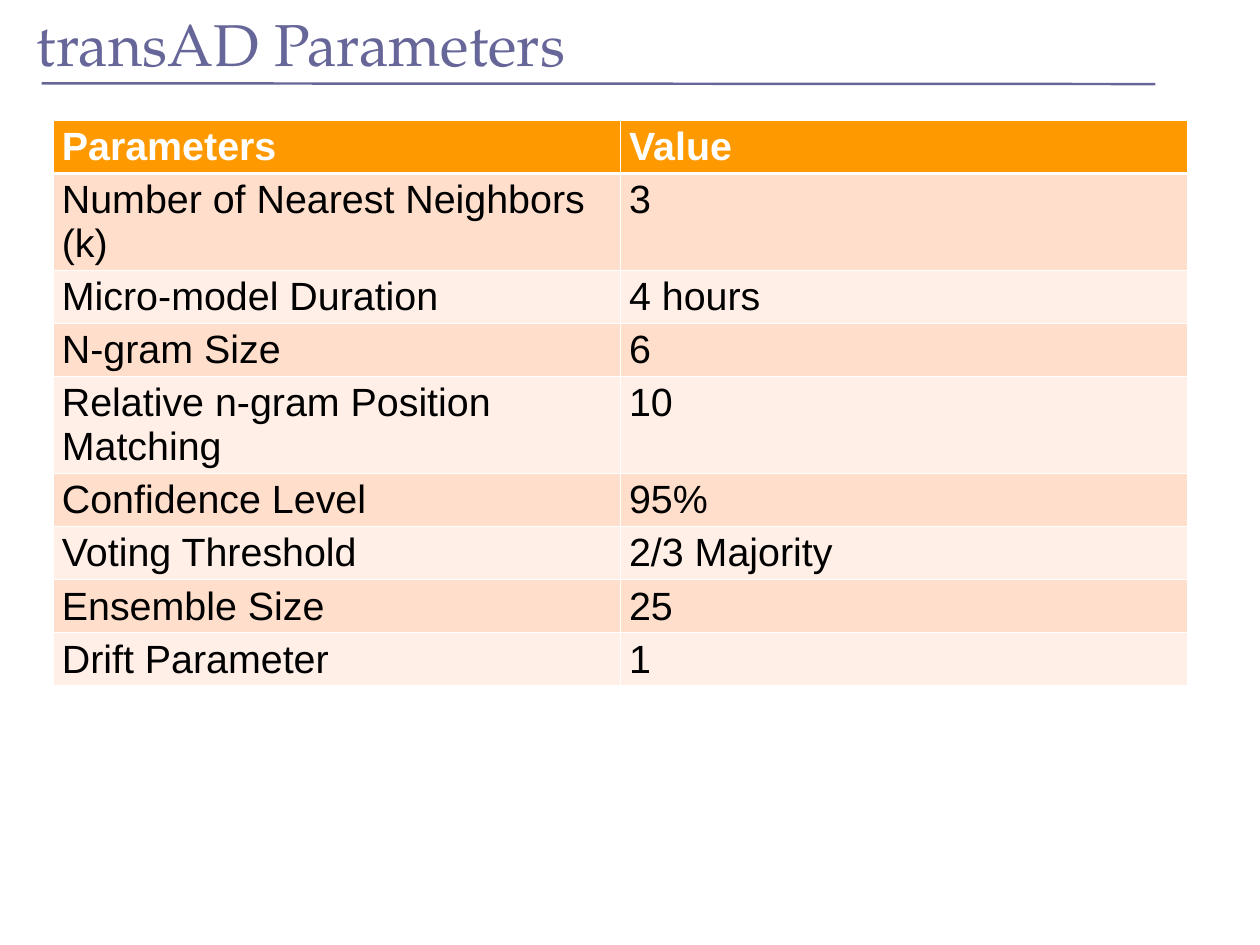
from dataclasses import dataclass

from lxml.etree import SubElement
from pptx import Presentation
from pptx.dml.color import RGBColor
from pptx.enum.shapes import MSO_CONNECTOR as Connector
from pptx.enum.text import MSO_ANCHOR as Anchor, MSO_AUTO_SIZE as AutoSize, PP_ALIGN as Align
from pptx.oxml import parse_xml
from pptx.oxml.ns import nsdecls, qn
from pptx.util import Cm, Pt

COLOURS = {
    "accent": "666699",
    "header": "FF9900",
    "odd row": "FFDECC",
    "even row": "FFEFE7",
    "white": "FFFFFF",
    "text": "000000",
}
LINE_HEIGHT, CELL_PADDING = 1.25, 0.25


@dataclass
class Parameter:
    name: str
    value: str
    lines: int = 1


PARAMETERS = [
    Parameter("Parameters", "Value"),
    Parameter("Number of Nearest Neighbors (k)", "3", lines=2),
    Parameter("Micro-model Duration", "4 hours"),
    Parameter("N-gram Size", "6"),
    Parameter("Relative n-gram Position Matching", "10", lines=2),
    Parameter("Confidence Level", "95%"),
    Parameter("Voting Threshold", "2/3 Majority"),
    Parameter("Ensemble Size", "25"),
    Parameter("Drift Parameter", "1"),
]


def colour(name: str) -> RGBColor:
    return RGBColor.from_string(COLOURS[name])


def add_borders(cell, bottom_width: float) -> None:
    """Put white borders ahead of the fill in the cell properties."""
    properties = cell._tc.get_or_add_tcPr()
    widths = {"lnL": 1, "lnR": 1, "lnT": 1, "lnB": bottom_width}
    for position, (side, width) in enumerate(widths.items()):
        border = parse_xml(
            f'<a:{side} {nsdecls("a")} w="{Pt(width)}"><a:solidFill>'
            f'<a:srgbClr val="{COLOURS["white"]}"/></a:solidFill></a:{side}>'
        )
        properties.insert(position, border)


def format_cell(cell, text: str, row_index: int) -> None:
    is_header = row_index == 0
    cell.text = text
    cell.fill.solid()
    band = "odd row" if row_index % 2 else "even row"
    cell.fill.fore_color.rgb = colour("header" if is_header else band)
    add_borders(cell, bottom_width=3 if is_header else 1)
    font = cell.text_frame.paragraphs[0].font
    font.name, font.size, font.bold = "Arial", Pt(32), is_header
    font.color.rgb = colour("white" if is_header else "text")


def add_title(slide, text: str) -> None:
    title = slide.shapes.title
    title.left, title.top, title.width, title.height = Cm(0.91), Cm(0), Cm(32.54), Cm(2.39)
    frame = title.text_frame
    frame.text = text
    frame.auto_size = AutoSize.NONE
    frame.vertical_anchor = Anchor.BOTTOM
    frame.margin_left = frame.margin_top = frame.margin_bottom = Cm(0.15)
    frame.margin_right = Cm(0.3)
    paragraph = frame.paragraphs[0]
    paragraph.alignment = Align.LEFT
    paragraph.font.name, paragraph.font.size = "TeX Gyre Pagella", Pt(48)
    paragraph.font.color.rgb = colour("accent")


def add_title_rule(slide) -> None:
    rule = slide.shapes.add_connector(
        Connector.STRAIGHT, Cm(1.19), Cm(2.39), Cm(33.12), Cm(2.41)
    )
    rule.line.color.rgb = colour("accent")
    rule.line.width = Pt(2)
    SubElement(rule._element.spPr, qn("a:effectLst"))


def add_parameter_table(slide, parameters: list[Parameter]) -> None:
    heights = [Cm(item.lines * LINE_HEIGHT + CELL_PADDING) for item in parameters]
    table = slide.shapes.add_table(
        len(parameters), 2, Cm(1.52), Cm(3.45), Cm(32.52), sum(heights)
    ).table
    for row_index, (item, height) in enumerate(zip(parameters, heights)):
        table.rows[row_index].height = height
        for column_index, text in enumerate((item.name, item.value)):
            format_cell(table.cell(row_index, column_index), text, row_index)


def main() -> None:
    presentation = Presentation()
    presentation.slide_width, presentation.slide_height = Cm(36.12), Cm(27.1)
    slide = presentation.slides.add_slide(presentation.slide_layouts[5])

    # Heading
    add_title_rule(slide)
    add_title(slide, "transAD Parameters")

    # Parameter values
    add_parameter_table(slide, PARAMETERS)

    presentation.save("out.pptx")


if __name__ == "__main__":
    main()
